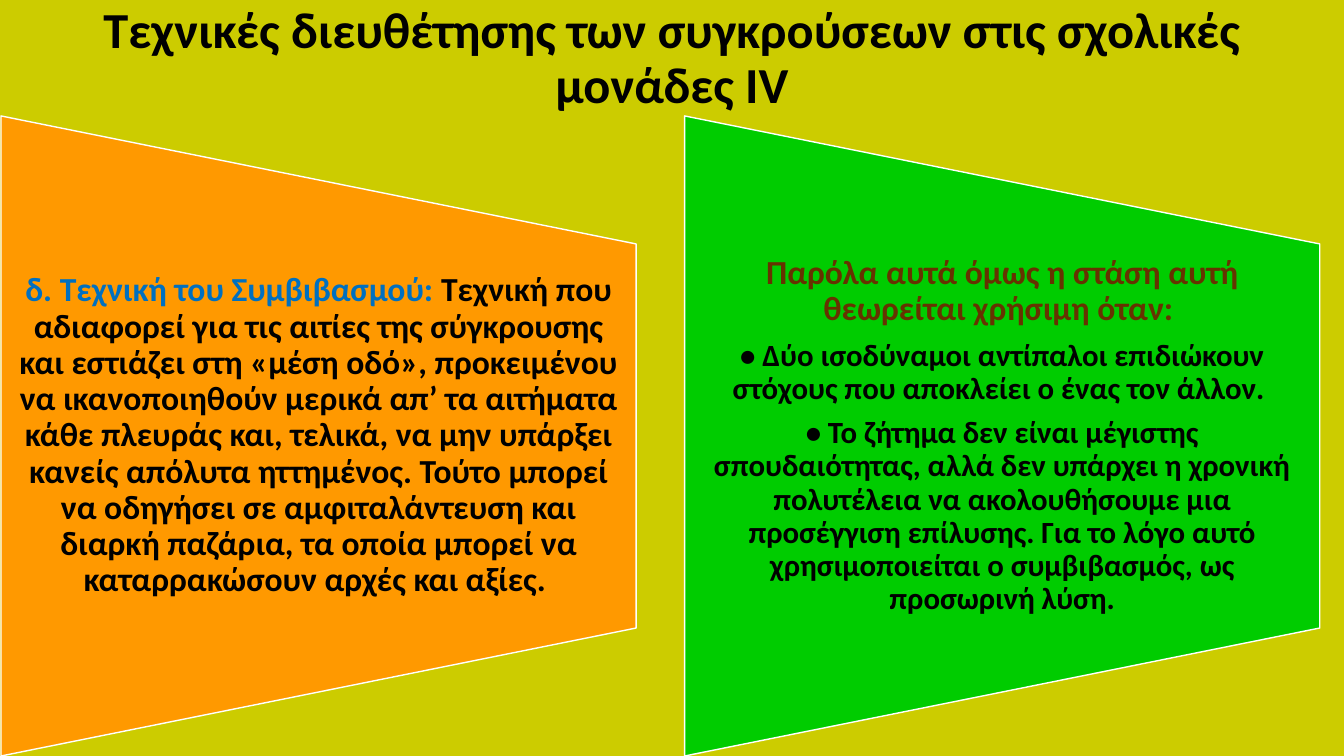
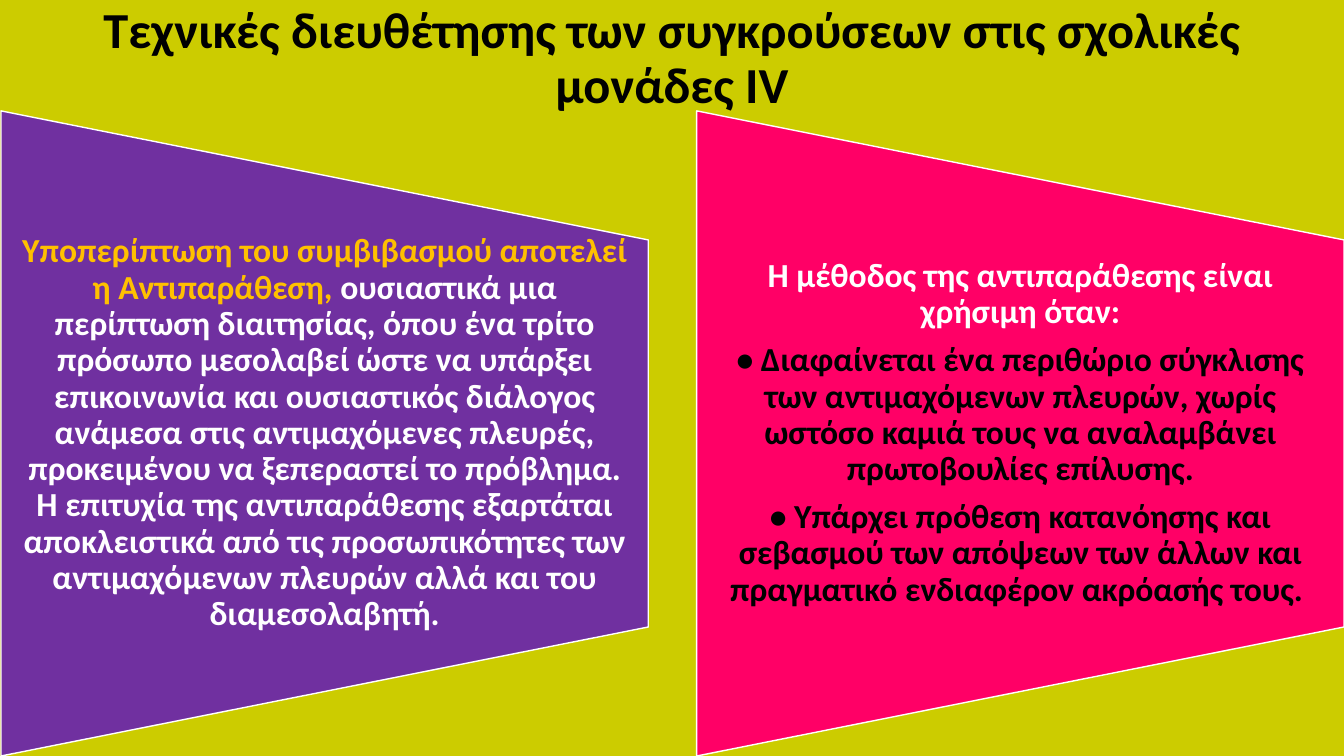
from pptx import Presentation
from pptx.dml.color import RGBColor
from pptx.enum.shapes import MSO_SHAPE
from pptx.enum.text import MSO_ANCHOR, MSO_AUTO_SIZE, PP_ALIGN
from pptx.util import Inches, Pt

TRAPEZE = MSO_SHAPE.FLOWCHART_MANUAL_OPERATION
TOP, MIDDLE = MSO_ANCHOR.TOP, MSO_ANCHOR.MIDDLE
CENTER = PP_ALIGN.CENTER
FIXED = MSO_AUTO_SIZE.NONE

WIDE, HIGH = 13.33, 7.5
GAP = 0.48
LEFT = 0.01
COLORS = {
    "olive": "CCCC00", "black": "000000", "white": "FFFFFF",
    "orange": "FF9900", "green": "00CC00", "blue": "0070C0",
    "brown": "663300", "purple": "7030A0", "pink": "FF0066",
    "gold": "FFC000",
}
TITLE = "Τεχνικές διευθέτησης των συγκρούσεων στις σχολικές μονάδες IV"

SLIDES = [
    {"width": 6.3, "height": 6.35, "panels": [
        ("orange", [
            (24, [
                ("δ. Τεχνική του Συμβιβασμού: ", "blue"),
                ("Τεχνική που αδιαφορεί για τις αιτίες της σύγκρουσης και "
                 "εστιάζει στη «μέση οδό», προκειμένου να ικανοποιηθούν "
                 "μερικά απ’ τα αιτήματα κάθε πλευράς και, τελικά, να μην "
                 "υπάρξει κανείς απόλυτα ηττημένος. Τούτο μπορεί να οδηγήσει "
                 "σε αμφιταλάντευση και διαρκή παζάρια, τα οποία μπορεί να "
                 "καταρρακώσουν αρχές και αξίες. ", "black"),
            ]),
        ]),
        ("green", [
            (24, [("Παρόλα αυτά όμως η στάση αυτή θεωρείται χρήσιμη όταν: ",
                   "brown")]),
            (22, [("• Δύο ισοδύναμοι αντίπαλοι επιδιώκουν στόχους που "
                   "αποκλείει ο ένας τον άλλον. ", "black")]),
            (22, [("• Το ζήτημα δεν είναι μέγιστης σπουδαιότητας, αλλά δεν "
                   "υπάρχει η χρονική πολυτέλεια να ακολουθήσουμε μια "
                   "προσέγγιση επίλυσης. Για το λόγο αυτό χρησιμοποιείται ο "
                   "συμβιβασμός, ως προσωρινή λύση.", "black")]),
        ]),
    ]},
    {"width": 6.42, "height": 6.4, "panels": [
        ("purple", [
            (24, [
                ("Υποπερίπτωση του συμβιβασμού αποτελεί η Αντιπαράθεση, ",
                 "gold"),
                ("ουσιαστικά μια περίπτωση διαιτησίας, όπου ένα τρίτο "
                 "πρόσωπο μεσολαβεί ώστε να υπάρξει επικοινωνία και "
                 "ουσιαστικός διάλογος ανάμεσα στις αντιμαχόμενες πλευρές, "
                 "προκειμένου να ξεπεραστεί το πρόβλημα. Η επιτυχία της "
                 "αντιπαράθεσης εξαρτάται αποκλειστικά από τις "
                 "προσωπικότητες των αντιμαχόμενων πλευρών αλλά και του "
                 "διαμεσολαβητή.", "white"),
            ]),
        ]),
        ("pink", [
            (24, [("Η μέθοδος της αντιπαράθεσης είναι χρήσιμη όταν:",
                   "white")]),
            (24, [("• Διαφαίνεται ένα περιθώριο σύγκλισης των αντιμαχόμενων "
                   "πλευρών, χωρίς ωστόσο καμιά τους να αναλαμβάνει "
                   "πρωτοβουλίες επίλυσης.", "black")]),
            (24, [("• Υπάρχει πρόθεση κατανόησης και σεβασμού των απόψεων "
                   "των άλλων και πραγματικό ενδιαφέρον ακρόασής τους. ",
                   "black")]),
        ]),
    ]},
]


def assign(target, values):
    for name, value in values.items():
        setattr(target, name, value)


class Deck:
    font = {"name": "Calibri", "bold": True}
    para = {"alignment": CENTER, "line_spacing": 0.9}
    title_frame = {"vertical_anchor": TOP, "word_wrap": True,
                   "auto_size": FIXED}
    panel_frame = {"vertical_anchor": MIDDLE, "word_wrap": True,
                   "auto_size": FIXED,
                   "margin_left": Inches(0.17), "margin_right": Inches(0.17),
                   "margin_top": 0, "margin_bottom": 0}

    def __init__(self):
        self.show = Presentation()
        assign(self.show, {"slide_width": Inches(WIDE),
                           "slide_height": Inches(HIGH)})
        self.slide = None

    def color(self, name):
        return RGBColor.from_string(COLORS[name])

    def fill(self, shape, name):
        shape.fill.solid()
        shape.fill.fore_color.rgb = self.color(name)

    def text(self, frame, paras, style):
        assign(frame, style)
        for index, (size, runs) in enumerate(paras):
            para = frame.add_paragraph() if index else frame.paragraphs[0]
            assign(para, self.para)
            para.space_before = Pt(0)
            para.space_after = Pt(size * 0.35)
            for words, name in runs:
                run = para.add_run()
                run.text = words
                assign(run.font, self.font)
                run.font.size = Pt(size)
                run.font.color.rgb = self.color(name)

    def page(self, title):
        self.slide = self.show.slides.add_slide(self.show.slide_layouts[5])
        head = self.slide.shapes.title
        assign(head, {"left": 0, "top": 0, "width": Inches(WIDE),
                      "height": Inches(HIGH)})
        self.fill(head, "olive")
        self.text(head.text_frame, [(36, [(title, "black")])],
                  self.title_frame)

    def panel(self, left, width, height, name, paras):
        top = HIGH - height
        turn = (width - height) / 2
        shape = self.slide.shapes.add_shape(
            TRAPEZE, Inches(left + turn), Inches(top - turn),
            Inches(height), Inches(width))
        shape.rotation = 270
        shape.shadow.inherit = False
        self.fill(shape, name)
        shape.line.color.rgb = self.color("white")
        shape.line.width = Pt(1)
        box = self.slide.shapes.add_textbox(
            Inches(left), Inches(top + height * 0.2),
            Inches(width), Inches(height * 0.6))
        self.text(box.text_frame, paras, self.panel_frame)


def main():
    deck = Deck()
    for data in SLIDES:
        deck.page(TITLE)
        width, height = data["width"], data["height"]
        for index, (name, paras) in enumerate(data["panels"]):
            left = LEFT + index * (width + GAP)
            deck.panel(left, width, height, name, paras)
    deck.show.save("out.pptx")


if __name__ == "__main__":
    main()
